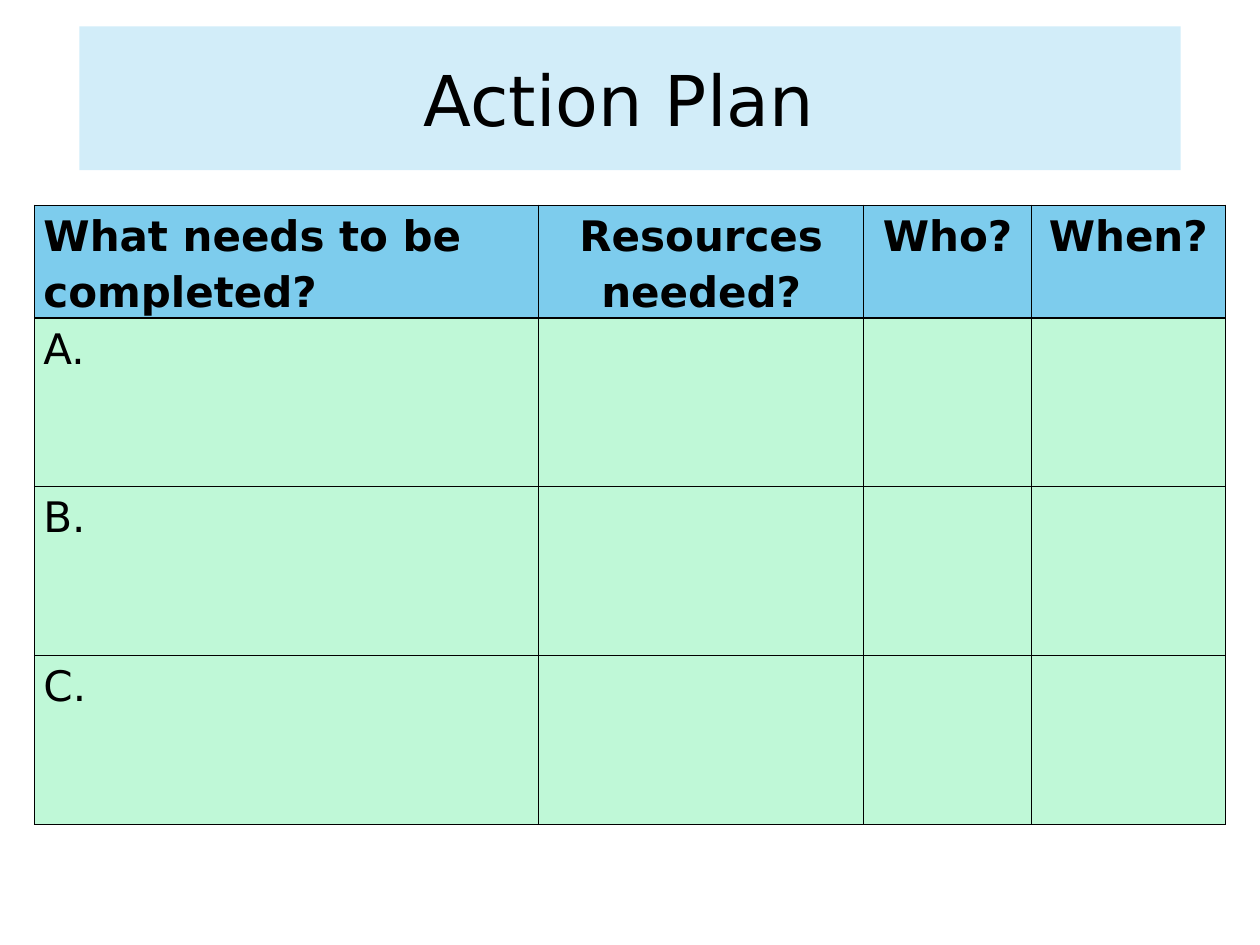
from dataclasses import dataclass

import lxml.etree
import pptx
import pptx.dml.color
import pptx.enum.shapes
import pptx.enum.text
import pptx.oxml.ns
import pptx.util

Align = pptx.enum.text.PP_ALIGN
Anchor = pptx.enum.text.MSO_ANCHOR
Color = pptx.dml.color.RGBColor

BLACK = Color(0x00, 0x00, 0x00)
TITLE_BLUE = Color(0xD2, 0xED, 0xF9)
HEADER_BLUE = Color(0x7D, 0xCC, 0xED)
BODY_GREEN = Color(0xBF, 0xF8, 0xD7)
FONT = "DejaVu Sans"
SLIDE_WIDTH = pptx.util.Inches(10)
SLIDE_HEIGHT = pptx.util.Inches(7.5)
HEADER_HEIGHT = pptx.util.Inches(0.89)
TASK_HEIGHT = pptx.util.Inches(1.34)


@dataclass(frozen=True)
class Column:
    heading: str
    width: float
    align: Align = Align.CENTER


COLUMNS = [
    Column("What needs to be completed?", 4, Align.LEFT),
    Column("Resources needed?", 2.58),
    Column("Who?", 1.33),
    Column("When?", 1.54),
]
TASKS = ["A.", "B.", "C."]


def write_text(frame, text: str, *, size: float, bold: bool = False,
               align: Align = Align.LEFT, spacing: float = 1.0) -> None:
    paragraph = frame.paragraphs[0]
    paragraph.alignment = align
    paragraph.line_spacing = spacing
    run = paragraph.add_run()
    run.text = text
    run.font.name = FONT
    run.font.size = pptx.util.Pt(size)
    run.font.bold = bold
    run.font.color.rgb = BLACK


def add_borders(cell) -> None:
    properties = cell._tc.get_or_add_tcPr()
    for position, side in enumerate(("lnL", "lnR", "lnT", "lnB")):
        line = lxml.etree.Element(pptx.oxml.ns.qn(f"a:{side}"), w=str(pptx.util.Pt(1)))
        fill = lxml.etree.SubElement(line, pptx.oxml.ns.qn("a:solidFill"))
        lxml.etree.SubElement(fill, pptx.oxml.ns.qn("a:srgbClr"), val=str(BLACK))
        properties.insert(position, line)


def format_cell(cell, color: Color) -> None:
    cell.fill.solid()
    cell.fill.fore_color.rgb = color
    cell.margin_left = cell.margin_right = pptx.util.Inches(0.07)
    cell.margin_top = cell.margin_bottom = 0
    add_borders(cell)


def add_title(slide, text: str) -> None:
    width = pptx.util.Inches(8.74)
    shape = slide.shapes.add_shape(
        pptx.enum.shapes.MSO_SHAPE.RECTANGLE, (SLIDE_WIDTH - width) // 2,
        pptx.util.Inches(0.21), width, pptx.util.Inches(1.14))
    shape.shadow.inherit = False
    shape.fill.solid()
    shape.fill.fore_color.rgb = TITLE_BLUE
    shape.line.fill.background()
    shape.text_frame.word_wrap = True
    shape.text_frame.vertical_anchor = Anchor.MIDDLE
    write_text(shape.text_frame, text, size=40, align=Align.CENTER)


def add_plan_table(slide, columns: list[Column], tasks: list[str]) -> None:
    width = pptx.util.Inches(sum(column.width for column in columns))
    table = slide.shapes.add_table(
        len(tasks) + 1, len(columns), (SLIDE_WIDTH - width) // 2,
        pptx.util.Inches(1.63), width, HEADER_HEIGHT + len(tasks) * TASK_HEIGHT).table
    for index, column in enumerate(columns):
        table.columns[index].width = pptx.util.Inches(column.width)
        write_text(table.cell(0, index).text_frame, column.heading, size=24,
                   bold=True, align=column.align, spacing=1.15)
    for index, task in enumerate(tasks, start=1):
        write_text(table.cell(index, 0).text_frame, task, size=24, spacing=1.15)
    for index, row in enumerate(table.rows):
        row.height = TASK_HEIGHT if index else HEADER_HEIGHT
        for cell in row.cells:
            format_cell(cell, BODY_GREEN if index else HEADER_BLUE)


def main() -> None:
    presentation = pptx.Presentation()
    presentation.slide_width = SLIDE_WIDTH
    presentation.slide_height = SLIDE_HEIGHT
    slide = presentation.slides.add_slide(presentation.slide_layouts[6])
    add_title(slide, "Action Plan ")
    add_plan_table(slide, COLUMNS, TASKS)
    presentation.save("out.pptx")


if __name__ == "__main__":
    main()
